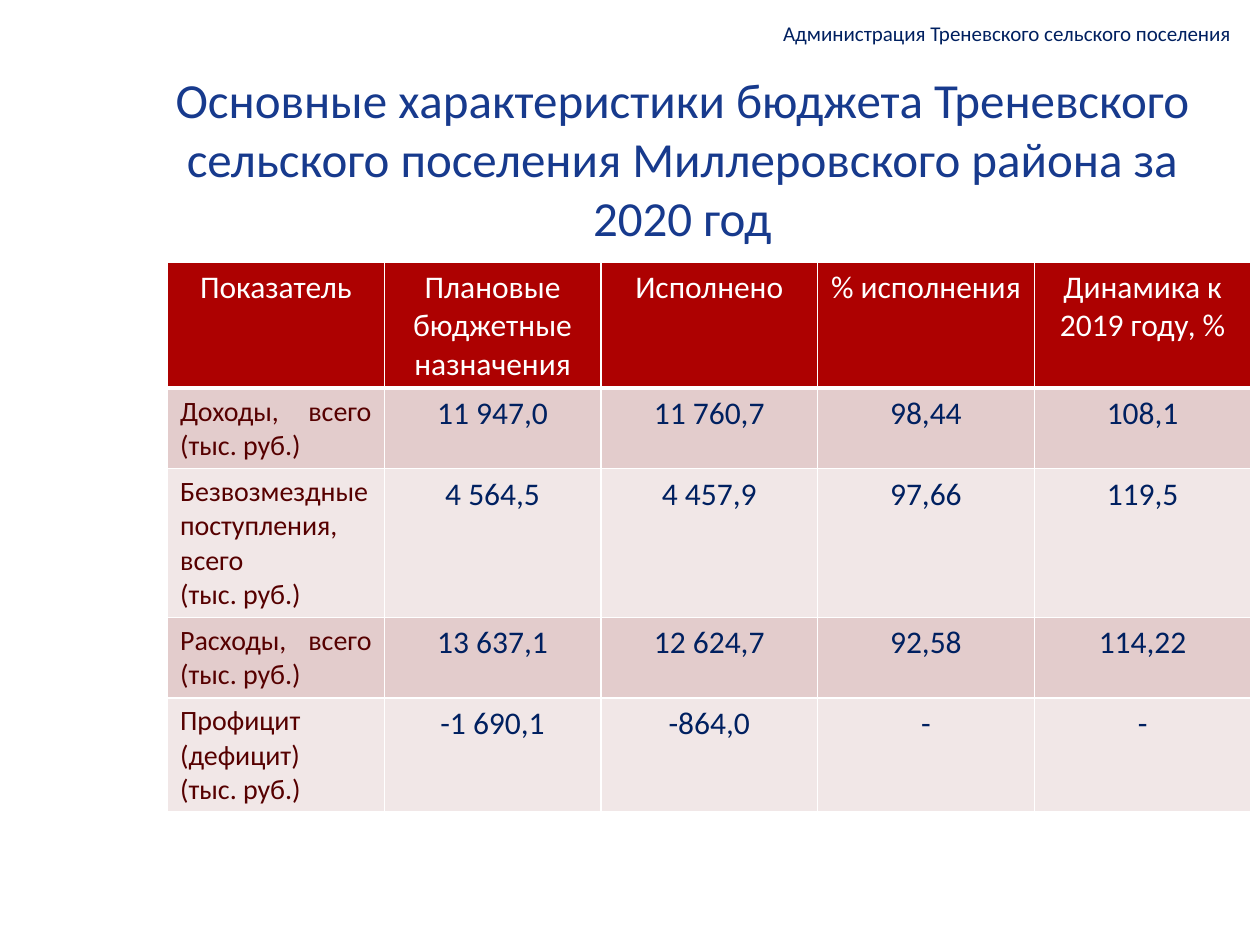
from dataclasses import dataclass

import pptx
import pptx.dml.color
import pptx.enum.text
import pptx.oxml
import pptx.oxml.ns
import pptx.util
from pptx.util import Inches

ALIGN = pptx.enum.text.PP_ALIGN
MIDDLE = pptx.enum.text.MSO_ANCHOR.MIDDLE


@dataclass(frozen=True)
class Theme:
    font: str = "Calibri"
    navy: str = "002060"
    title_blue: str = "173A8D"
    maroon: str = "560000"
    white: str = "FFFFFF"
    header_fill: str = "AD0101"
    band_fills: tuple = ("E3CCCC", "F1E7E7")
    caption_size: int = 12
    title_size: int = 28
    label_size: int = 16
    value_size: int = 18


THEME = Theme()

HEADERS = ["Показатель", "Плановые бюджетные назначения", "Исполнено",
           "% исполнения", "Динамика к 2019 году, %"]
# Each label is a list of paragraphs
BUDGET_ROWS = [
    (["Доходы, всего (тыс. руб.)"], ["11 947,0", "11 760,7", "98,44", "108,1"]),
    (["Безвозмездные поступления, всего", "(тыс. руб.)"],
     ["4 564,5", "4 457,9", "97,66", "119,5"]),
    (["Расходы, всего (тыс. руб.)"], ["13 637,1", "12 624,7", "92,58", "114,22"]),
    (["Профицит (дефицит)", "(тыс. руб.)"], ["-1 690,1", "-864,0", "-", "-"]),
]
ROW_HEIGHTS = [1.0, 0.64, 1.18, 0.64, 0.87]
COLUMN_WIDTH = 1.72


def rgb(color):
    return pptx.dml.color.RGBColor.from_string(color)


def write_text(text_frame, lines, size, color, alignment):
    text_frame.word_wrap = True
    for index, line in enumerate(lines):
        paragraph = text_frame.paragraphs[0] if index == 0 else text_frame.add_paragraph()
        paragraph.alignment = alignment
        run = paragraph.add_run()
        run.text = line
        run.font.name = THEME.font
        run.font.size = pptx.util.Pt(size)
        run.font.bold = False
        run.font.color.rgb = rgb(color)


def add_caption(slide, text):
    shape = slide.shapes.add_textbox(Inches(3.54), Inches(0.14), Inches(6.33), Inches(0.24))
    shape.text_frame.vertical_anchor = MIDDLE
    write_text(shape.text_frame, [text], THEME.caption_size, THEME.navy, ALIGN.RIGHT)


def set_title(slide, text):
    title = slide.shapes.title
    title.left, title.top = Inches(1.08), Inches(0.67)
    title.width, title.height = Inches(8.67), Inches(1.17)
    title.text_frame.auto_size = pptx.enum.text.MSO_AUTO_SIZE.NONE
    title.text_frame.vertical_anchor = MIDDLE
    write_text(title.text_frame, [text], THEME.title_size, THEME.title_blue, ALIGN.CENTER)


def set_borders(cell, widths):
    properties = cell._tc.get_or_add_tcPr()
    for side, width in zip("LRTB", widths):
        properties.append(pptx.oxml.parse_xml(
            f'<a:ln{side} {pptx.oxml.ns.nsdecls("a")} w="{pptx.util.Pt(width)}">'
            f'<a:solidFill><a:srgbClr val="{THEME.white}"/></a:solidFill></a:ln{side}>'))


def format_cell(cell, lines, size, color, alignment, fill, borders=(1, 1, 1, 1)):
    set_borders(cell, borders)
    cell.fill.solid()
    cell.fill.fore_color.rgb = rgb(fill)
    write_text(cell.text_frame, lines, size, color, alignment)


def add_budget_table(slide):
    shape = slide.shapes.add_table(
        len(ROW_HEIGHTS), len(HEADERS), Inches(1.33), Inches(2.08),
        Inches(COLUMN_WIDTH * len(HEADERS)), Inches(sum(ROW_HEIGHTS)))
    table = shape.table
    for column in table.columns:
        column.width = Inches(COLUMN_WIDTH)
    for row, height in zip(table.rows, ROW_HEIGHTS):
        row.height = Inches(height)

    # Header row, with a thick rule below
    for cell, header in zip(table.rows[0].cells, HEADERS):
        format_cell(cell, [header], THEME.value_size, THEME.white, ALIGN.CENTER,
                    THEME.header_fill, (1, 1, 1, 3))

    # Banded body rows
    for index, (label, values) in enumerate(BUDGET_ROWS):
        fill = THEME.band_fills[index % 2]
        borders = (1, 1, 3 if index == 0 else 1, 1)
        label_cell, *value_cells = table.rows[index + 1].cells
        format_cell(label_cell, label, THEME.label_size, THEME.maroon, ALIGN.JUSTIFY,
                    fill, borders)
        for cell, value in zip(value_cells, values):
            format_cell(cell, [value], THEME.value_size, THEME.navy, ALIGN.CENTER,
                        fill, borders)


def main():
    presentation = pptx.Presentation()
    presentation.slide_width, presentation.slide_height = Inches(10), Inches(7.5)
    slide = presentation.slides.add_slide(presentation.slide_layouts.get_by_name("Title Only"))
    add_caption(slide, "Администрация Треневского сельского поселения")
    set_title(slide, "Основные характеристики бюджета Треневского сельского поселения "
                     "Миллеровского района за 2020 год")
    add_budget_table(slide)
    presentation.save("out.pptx")


if __name__ == "__main__":
    main()
